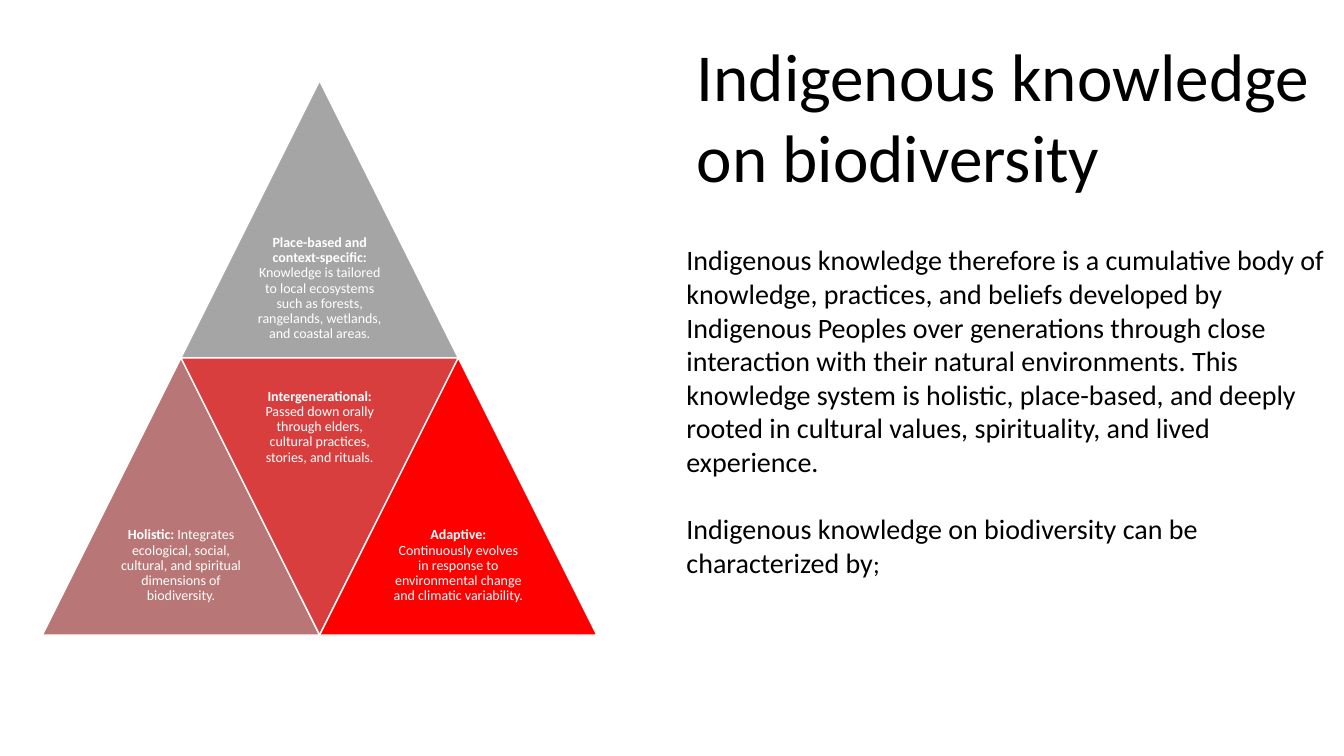
import pptx
import pptx.util
import pptx.dml.color
import pptx.enum.shapes
import pptx.enum.text

Inches = pptx.util.Inches
Pt = pptx.util.Pt
PP_ALIGN = pptx.enum.text.PP_ALIGN
MSO_ANCHOR = pptx.enum.text.MSO_ANCHOR

# Content
TITLE = "Indigenous knowledge on biodiversity"
BODY = [
    [("Indigenous knowledge therefore is a cumulative body of knowledge, practices, "
      "and beliefs developed by Indigenous Peoples over generations through close "
      "interaction with their natural environments. This knowledge system is holistic, "
      "place-based, and deeply rooted in cultural values, spirituality, and lived "
      "experience.", 20)],
    [("Indigenous knowledge on biodiversity can be characterized by", 20), (";", 18)],
]
# Heading, description, colour, column (half sides), row, points down
TRAITS = [
    ("Place-based and context-specific:",
     " Knowledge is tailored to local ecosystems such as forests, rangelands, "
     "wetlands, and coastal areas.", "grey", 1, 0, False),
    ("Holistic:",
     " Integrates ecological, social, cultural, and spiritual dimensions of "
     "biodiversity.", "rose", 0, 1, False),
    ("Intergenerational:",
     " Passed down orally through elders, cultural practices, stories, and rituals.",
     "crimson", 1, 1, True),
    ("Adaptive:",
     " Continuously evolves in response to environmental change and climatic "
     "variability.", "red", 2, 1, False),
]
COLORS = {"grey": "A5A5A5", "rose": "B97676", "crimson": "D83E3E", "red": "FE0000",
          "white": "FFFFFF", "black": "000000"}
FONT = "Calibri"
PYRAMID_LEFT, PYRAMID_TOP, SIDE = 0.42, 0.8, 2.75


def color(name):
    return pptx.dml.color.RGBColor.from_string(COLORS[name])


def format_run(run, size, color_name, bold=False):
    run.font.name = FONT
    run.font.size = Pt(size)
    run.font.bold = bold
    run.font.color.rgb = color(color_name)


def add_run(paragraph, text, size, color_name, bold=False):
    run = paragraph.add_run()
    run.text = text
    format_run(run, size, color_name, bold)


def add_text_box(slide, left, top, width, height):
    box = slide.shapes.add_textbox(Inches(left), Inches(top), Inches(width), Inches(height))
    box.text_frame.word_wrap = True
    return box.text_frame


def add_title(slide):
    title = slide.shapes.title
    title.left, title.top = Inches(6.81), Inches(0.29)
    title.width, title.height = Inches(6.66), Inches(2.02)
    frame = title.text_frame
    frame.text = TITLE
    frame.word_wrap = True
    frame.auto_size = pptx.enum.text.MSO_AUTO_SIZE.NONE
    frame.vertical_anchor = MSO_ANCHOR.TOP
    frame.paragraphs[0].alignment = PP_ALIGN.LEFT
    format_run(frame.paragraphs[0].runs[0], 48, "black")


def add_body(slide):
    frame = add_text_box(slide, 6.71, 2.36, 6.62, 4.09)
    for index, runs in enumerate(BODY):
        paragraph = frame.add_paragraph() if index else frame.paragraphs[0]
        paragraph.space_before = Pt(24 if index else 0)
        for text, size in runs:
            add_run(paragraph, text, size, "black")


def add_trait(slide, heading, description, fill, column, row, points_down):
    left = PYRAMID_LEFT + column * SIDE / 2
    top = PYRAMID_TOP + row * SIDE
    triangle = slide.shapes.add_shape(
        pptx.enum.shapes.MSO_SHAPE.ISOSCELES_TRIANGLE,
        Inches(left), Inches(top), Inches(SIDE), Inches(SIDE))
    triangle.shadow.inherit = False
    triangle.rotation = 180 if points_down else 0
    triangle.fill.solid()
    triangle.fill.fore_color.rgb = color(fill)
    triangle.line.color.rgb = color("white")
    triangle.line.width = Pt(1)

    # The label fills the wide half of the triangle
    label_top = top if points_down else top + SIDE / 2
    frame = add_text_box(slide, left + SIDE / 4, label_top, SIDE / 2, SIDE / 2)
    frame.vertical_anchor = MSO_ANCHOR.MIDDLE
    frame.margin_left = frame.margin_right = Inches(0.04)
    frame.margin_top = frame.margin_bottom = Inches(0.04)
    paragraph = frame.paragraphs[0]
    paragraph.alignment = PP_ALIGN.CENTER
    paragraph.line_spacing = 0.9
    add_run(paragraph, heading, 10, "white", bold=True)
    add_run(paragraph, description, 10, "white")


def main():
    presentation = pptx.Presentation()
    presentation.slide_width = Inches(13.33)
    presentation.slide_height = Inches(7.5)
    slide = presentation.slides.add_slide(presentation.slide_layouts[5])
    add_title(slide)
    add_body(slide)
    for trait in TRAITS:
        add_trait(slide, *trait)
    presentation.save("out.pptx")


if __name__ == "__main__":
    main()
